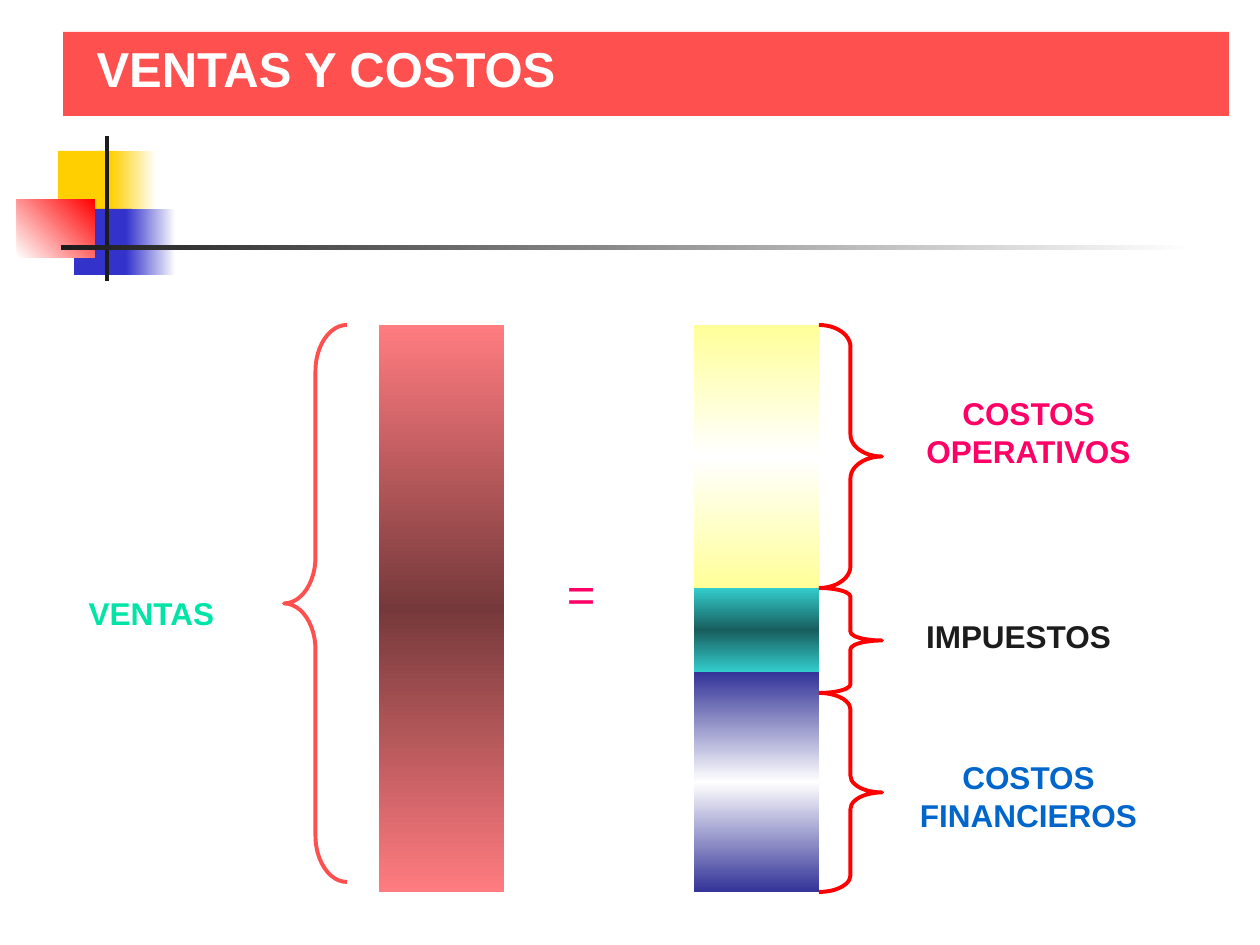
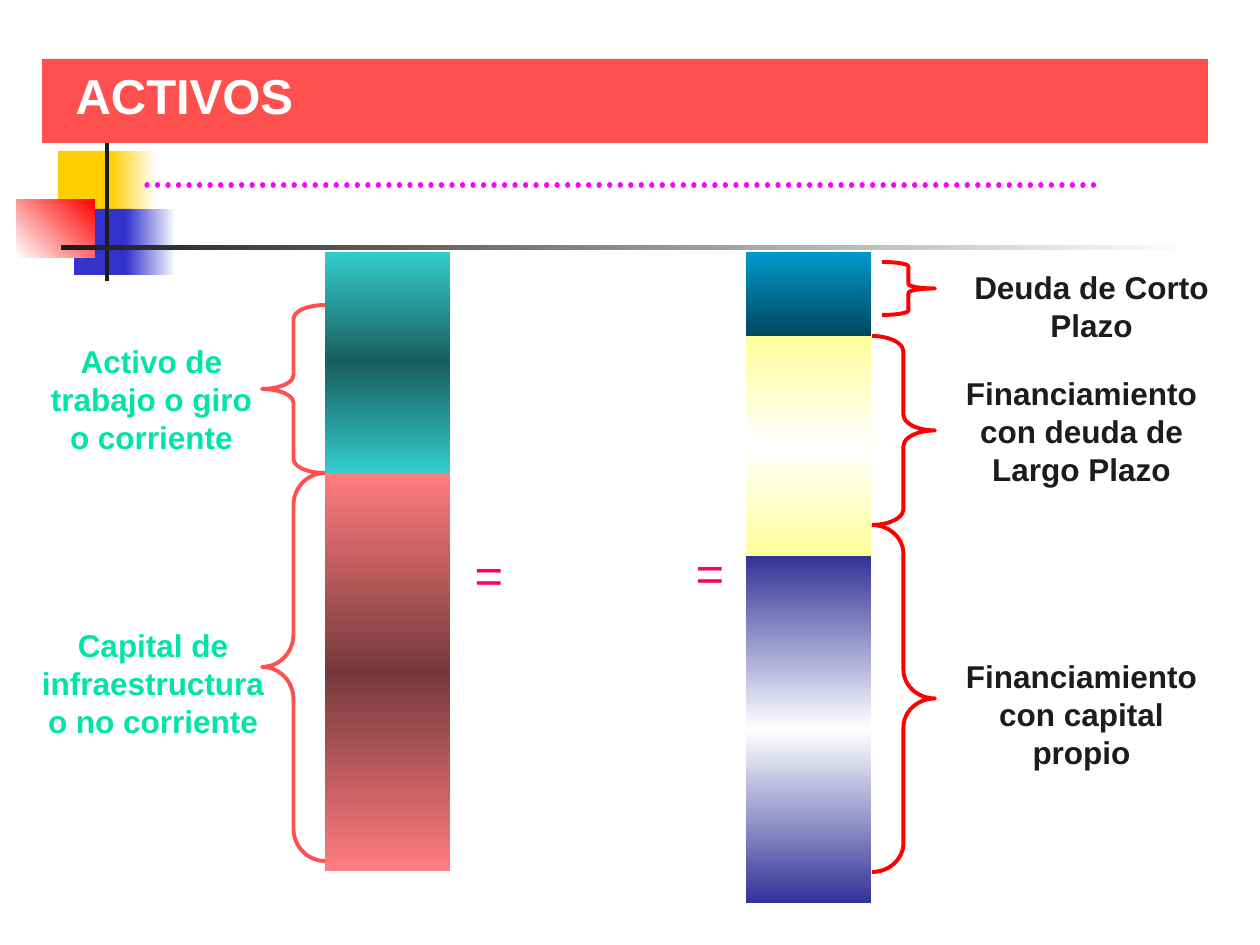
import copy

import pptx
import pptx.dml.color
import pptx.enum.dml
import pptx.enum.shapes
import pptx.enum.text
import pptx.oxml
import pptx.oxml.ns
import pptx.util

RGBColor = pptx.dml.color.RGBColor
SHAPE = pptx.enum.shapes.MSO_SHAPE
ALIGN = pptx.enum.text.PP_ALIGN

WHITE = RGBColor(0xFF, 0xFF, 0xFF)
INK = RGBColor(0x1C, 0x1C, 0x1C)
CORAL = RGBColor(0xFF, 0x50, 0x50)
RED = RGBColor(0xFF, 0x00, 0x00)
GOLD = RGBColor(0xFF, 0xCF, 0x01)
INDIGO = RGBColor(0x33, 0x33, 0xCC)
MINT = RGBColor(0x00, 0xE4, 0xA8)
PINK = RGBColor(0xFF, 0x00, 0x66)
BLUE = RGBColor(0x00, 0x66, 0xCC)
MAGENTA = RGBColor(0xFF, 0x00, 0xFF)
ROSE = RGBColor(0xFF, 0x7C, 0x80)
MAROON = RGBColor(0x76, 0x39, 0x3B)
TURQUOISE = RGBColor(0x33, 0xCC, 0xCC)
PINE = RGBColor(0x18, 0x5E, 0x5E)
NAVY = RGBColor(0x33, 0x33, 0x99)
LEMON = RGBColor(0xFF, 0xFF, 0x99)
SKY = RGBColor(0x00, 0x99, 0xCC)
DEEP_SKY = RGBColor(0x00, 0x47, 0x5E)

RED_BAR = (ROSE, MAROON, ROSE)
TEAL_BAR = (TURQUOISE, PINE, TURQUOISE)
NAVY_BAR = (NAVY, WHITE, NAVY)
YELLOW_BAR = (LEMON, WHITE, LEMON)
SKY_BAR = (SKY, DEEP_SKY)

FONT = "Arial"
PX_PER_INCH = 126
BAR_WIDTH = 125
BRACE_WIDTH = 63


def px(length):
    """Turn whole pixels into EMU."""
    return pptx.util.Emu(round(length * 914400 / PX_PER_INCH))


def paint(shape, colors, angle):
    """Fill a shape with one colour or with an even gradient, angle counter-clockwise."""
    if len(colors) == 1:
        shape.fill.solid()
        shape.fill.fore_color.rgb = colors[0]
        return
    shape.fill.gradient()
    shape.fill.gradient_angle = angle
    stop_list = shape._element.spPr.find(".//" + pptx.oxml.ns.qn("a:gsLst"))
    for _ in colors[2:]:
        stop_list.append(copy.deepcopy(stop_list[-1]))
    for index, (stop, color) in enumerate(zip(shape.fill.gradient_stops, colors)):
        stop.color.rgb = color
        stop.position = index / (len(colors) - 1)


def add_block(page, left, top, width, height, colors, angle=270):
    """Add a rectangle without outline."""
    block = page.shapes.add_shape(
        SHAPE.RECTANGLE, px(left), px(top), px(width), px(height))
    block.shadow.inherit = False
    block.line.fill.background()
    paint(block, colors, angle)
    return block


def add_stack(page, left, top, parts):
    """Stack bars downwards from (colours, height) pairs."""
    for colors, height in parts:
        add_block(page, left, top, BAR_WIDTH, height, colors)
        top += height


def add_brace(page, kind, left, top, height, color, width=BRACE_WIDTH):
    """Add a brace whose curls take a twelfth of its height."""
    brace = page.shapes.add_shape(kind, px(left), px(top), px(width), px(height))
    brace.shadow.inherit = False
    brace.fill.background()
    brace.line.color.rgb = color
    brace.line.width = pptx.util.Pt(2.25)
    brace.adjustments[0] = height / width / 12


def write(frame, text, color, size=18, bold=True, align=ALIGN.CENTER):
    """Write one formatted paragraph into a text frame and return it."""
    para = frame.paragraphs[0]
    para.alignment = align
    span = para.add_run()
    span.text = text
    span.font.name = FONT
    span.font.size = pptx.util.Pt(size)
    span.font.bold = bold
    span.font.color.rgb = color
    return para


def add_box(page, left, top, width, height, wrap=True):
    """Add an empty text box and return its frame."""
    box = page.shapes.add_textbox(px(left), px(top), px(width), px(height))
    box.text_frame.word_wrap = wrap
    box.text_frame.auto_size = pptx.enum.text.MSO_AUTO_SIZE.SHAPE_TO_FIT_TEXT
    return box.text_frame


def add_label(page, text, left, top, width, height, color):
    """Add a bold centred label."""
    write(add_box(page, left, top, width, height), text, color)


def add_equals(page, left, top):
    """Add an indented equals sign."""
    para = write(add_box(page, left, top, 117, 72, wrap=False), "=", PINK,
                 size=28, bold=False)
    para.level = 1
    properties = para._p.get_or_add_pPr()
    properties.set("marL", str(px(63)))
    properties.set("indent", "0")


def add_dotted_line(page, left, right, top):
    """Add a horizontal line of round dots."""
    line = page.shapes.add_connector(
        pptx.enum.shapes.MSO_CONNECTOR.STRAIGHT, px(left), px(top), px(right), px(top))
    line.line.color.rgb = MAGENTA
    line.line.width = pptx.util.Pt(3)
    line.line.dash_style = pptx.enum.dml.MSO_LINE.ROUND_DOT
    line.line._get_or_add_ln().set("cap", "rnd")
    line._element.spPr.append(pptx.oxml.parse_xml(
        "<a:effectLst %s/>" % pptx.oxml.ns.nsdecls("a")))


def decorate_layout(page):
    """Move the shared squares and cross lines to the layout of a page."""
    ornaments = (
        add_block(page, 58, 151, 60, 66, (GOLD,)),
        add_block(page, 111, 151, 45, 66, (GOLD, WHITE), 0),
        add_block(page, 74, 209, 58, 66, (INDIGO,)),
        add_block(page, 126, 209, 50, 66, (INDIGO, WHITE), 0),
        add_block(page, 17, 199, 78, 59, (WHITE, RED), 45),
        add_block(page, 105, 136, 4, 145, (INK,)),
        add_block(page, 61, 245, 1133, 5, (INK, WHITE), 0),
    )
    for number, ornament in enumerate(ornaments, start=20):
        ornament._element.nvSpPr.cNvPr.set("id", str(number))
        page.slide_layout.shapes._spTree.append(ornament._element)


def add_title(page, text, left, top):
    """Draw the title band and set the title above it."""
    add_block(page, left, top, 1166, 84, (CORAL,))
    title = page.shapes.title
    title.left, title.top = px(left + 21), px(top)
    title.width, title.height = px(1134), px(130)
    title.text_frame.vertical_anchor = pptx.enum.text.MSO_ANCHOR.TOP
    write(title.text_frame, text, WHITE, size=28, align=ALIGN.LEFT)
    page.shapes._spTree.append(title._element)


def build_sales(page):
    """Show sales as the sum of costs and taxes."""
    add_title(page, "VENTAS Y COSTOS", 63, 32)
    add_stack(page, 379, 325, [(RED_BAR, 567)])
    add_stack(page, 694, 325, [(YELLOW_BAR, 263), (TEAL_BAR, 84), (NAVY_BAR, 220)])
    add_brace(page, SHAPE.LEFT_BRACE, 284, 325, 557, CORAL)
    for top, height in ((325, 263), (588, 105), (693, 199)):
        add_brace(page, SHAPE.RIGHT_BRACE, 819, top, height, RED)
    add_equals(page, 491, 557)
    add_label(page, "VENTAS", 32, 588, 239, 50, MINT)
    add_label(page, "COSTOS OPERATIVOS", 892, 388, 273, 88, PINK)
    add_label(page, "IMPUESTOS", 882, 611, 273, 50, INK)
    add_label(page, "COSTOS FINANCIEROS", 892, 752, 273, 88, BLUE)


def build_assets(page):
    """Show assets beside the ways they are financed."""
    add_title(page, "ACTIVOS", 42, 59)
    add_dotted_line(page, 147, 1103, 185)
    add_stack(page, 325, 252, [(TEAL_BAR, 221), (RED_BAR, 398)])
    add_stack(page, 746, 252, [(SKY_BAR, 84), (YELLOW_BAR, 220), (NAVY_BAR, 347)])
    for top, height in ((305, 168), (473, 388)):
        add_brace(page, SHAPE.LEFT_BRACE, 262, top, height, CORAL)
    add_brace(page, SHAPE.RIGHT_BRACE, 882, 262, 53, RED, width=53)
    for top, height in ((336, 189), (525, 347)):
        add_brace(page, SHAPE.RIGHT_BRACE, 872, top, height, RED)
    add_equals(page, 399, 538)
    add_equals(page, 620, 536)
    add_label(page, "Activo de trabajo o giro o corriente", 32, 336, 239, 126, MINT)
    add_label(page, "Capital de infraestructura o no corriente", 25, 620, 256, 126, MINT)
    add_label(page, "Deuda de Corto Plazo", 955, 262, 273, 88, INK)
    add_label(page, "Financiamiento con deuda de Largo Plazo", 945, 368, 273, 126, INK)
    add_label(page, "Financiamiento con capital propio", 945, 651, 273, 126, INK)


def main():
    """Build and save the deck."""
    deck = pptx.Presentation()
    deck.slide_width, deck.slide_height = px(1260), px(945)
    layout = deck.slide_layouts.get_by_name("Title Only")
    sales, assets = (deck.slides.add_slide(layout) for _ in range(2))
    decorate_layout(sales)
    build_sales(sales)
    build_assets(assets)
    deck.save("out.pptx")


if __name__ == "__main__":
    main()
